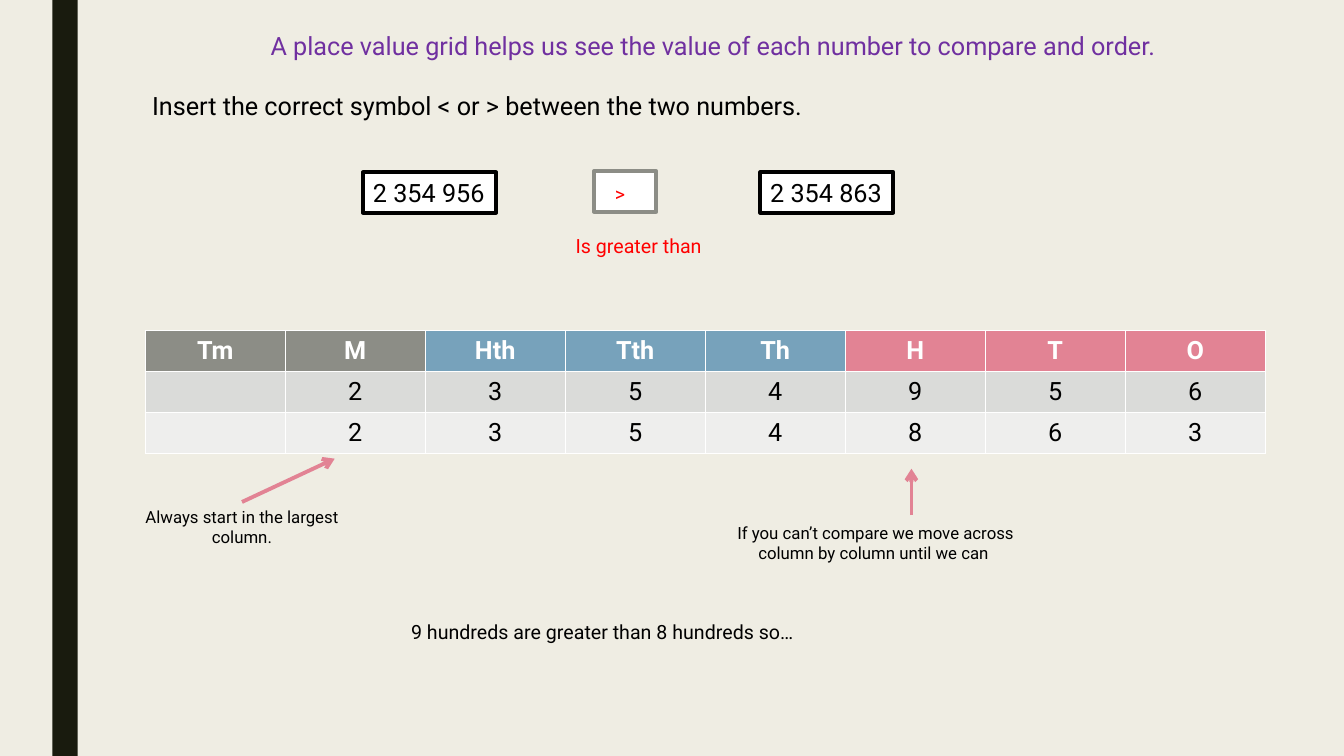
"""Build a slide comparing two numbers with a place value grid."""
from lxml import etree
from pptx import Presentation
from pptx.dml.color import RGBColor
from pptx.enum.shapes import MSO_CONNECTOR as Connector, MSO_SHAPE as Shape
from pptx.enum.text import MSO_ANCHOR as Anchor, PP_ALIGN as Align
from pptx.oxml.ns import qn
from pptx.util import Inches, Pt

FONT = "Roboto"
COLOURS = {
    "background": "EFEDE3", "stripe": "191B0E", "white": "FFFFFF", "black": "000000",
    "purple": "7030A0", "red": "FF0000", "grey": "8C8D86", "blue": "77A2BB",
    "pink": "E28394", "band": "DADBD9", "light band": "EEEEED",
}
HEADINGS = [
    ("Tm", "grey"), ("M", "grey"), ("Hth", "blue"), ("Tth", "blue"),
    ("Th", "blue"), ("H", "pink"), ("T", "pink"), ("O", "pink"),
]
DIGIT_ROWS = [("band", " 2354956"), ("light band", " 2354863")]
GRID = (1.44, 3.28, 11.11, 1.22)
NUMBER_BOXES = [
    ("2 354 956", (3.6, 1.71, 1.32, 0.4), "black"),
    ("", (5.89, 1.7, 0.62, 0.4), "grey"),
    ("2 354 863", (7.54, 1.71, 1.32, 0.4), "black"),
]
TEXTS = [
    ("A place value grid helps us see the value of each number to compare and order. ",
     (2.08, 0.25, 10.05, 0.4), 18, "purple", Align.CENTER),
    ("Insert the correct symbol < or > between the two numbers.",
     (1.41, 0.85, 6.79, 0.4), 18, "black", Align.LEFT),
    ("Always start in the largest column.",
     (1.3, 4.98, 2.2, 0.5), 12, "black", Align.CENTER),
    ("If you can’t compare we move across column by column until we can ",
     (6.92, 5.14, 3.53, 0.5), 12, "black", Align.CENTER),
    ("9 hundreds are greater than 8 hundreds so…",
     (1.83, 6.1, 8.29, 0.34), 14, "black", Align.CENTER),
    (">", (6, 1.76, 0.3, 0.34), 14, "red", Align.CENTER),
    ("Is greater than", (4.72, 2.27, 3.23, 0.34), 14, "red", Align.CENTER),
]
ARROWS = [(2.4, 4.98, 3.32, 4.55), (9.04, 5.11, 9.04, 4.65)]


def inches(values):
    return [Inches(value) for value in values]


def colour(name):
    return RGBColor.from_string(COLOURS[name])


def paint(target, name):
    target.fill.solid()
    target.fill.fore_color.rgb = colour(name)


def write(frame, text, size, name, align, bold=False):
    para = frame.paragraphs[0]
    para.text = text
    para.alignment = align
    para.font.name = FONT
    para.font.size = Pt(size)
    para.font.bold = bold
    para.font.color.rgb = colour(name)


def add_rectangle(page, place, fill):
    box = page.shapes.add_shape(Shape.RECTANGLE, *inches(place))
    box.shadow.inherit = False
    paint(box, fill)
    return box


def add_number_box(page, text, place, outline):
    box = add_rectangle(page, place, "white")
    box.line.color.rgb = colour(outline)
    box.line.width = Pt(2.75)
    if text:
        box.text_frame.word_wrap = False
        write(box.text_frame, text, 18, "black", Align.LEFT)


def add_text(page, text, place, size, name, align):
    frame = page.shapes.add_textbox(*inches(place)).text_frame
    frame.word_wrap = True
    write(frame, text, size, name, align)


def add_arrow(page, ends):
    arrow = page.shapes.add_connector(Connector.STRAIGHT, *inches(ends))
    arrow.line.color.rgb = colour("pink")
    arrow.line.width = Pt(2.75)
    properties = arrow.element.spPr
    etree.SubElement(properties.find(qn("a:ln")), qn("a:tailEnd"), type="arrow")
    etree.SubElement(properties, qn("a:effectLst"))


def add_grid(page):
    rows = [[(text, fill, "white", True) for text, fill in HEADINGS]]
    rows += [[(digit.strip(), fill, "black", False) for digit in digits]
             for fill, digits in DIGIT_ROWS]
    table = page.shapes.add_table(len(rows), len(HEADINGS), *inches(GRID)).table
    for row, entries in enumerate(rows):
        for column, (text, fill, name, bold) in enumerate(entries):
            cell = table.cell(row, column)
            cell.vertical_anchor = Anchor.MIDDLE
            paint(cell, fill)
            write(cell.text_frame, text, 18, name, Align.CENTER, bold)


def main():
    deck = Presentation()
    deck.slide_width, deck.slide_height = inches((13.33, 7.5))
    page = deck.slides.add_slide(deck.slide_layouts[6])
    paint(page.background, "background")
    stripe = add_rectangle(page, (0.52, 0, 0.25, 7.5), "stripe")
    stripe.line.fill.background()
    add_grid(page)
    for number_box in NUMBER_BOXES:
        add_number_box(page, *number_box)
    for text in TEXTS:
        add_text(page, *text)
    for ends in ARROWS:
        add_arrow(page, ends)
    deck.save("out.pptx")


if __name__ == "__main__":
    main()
